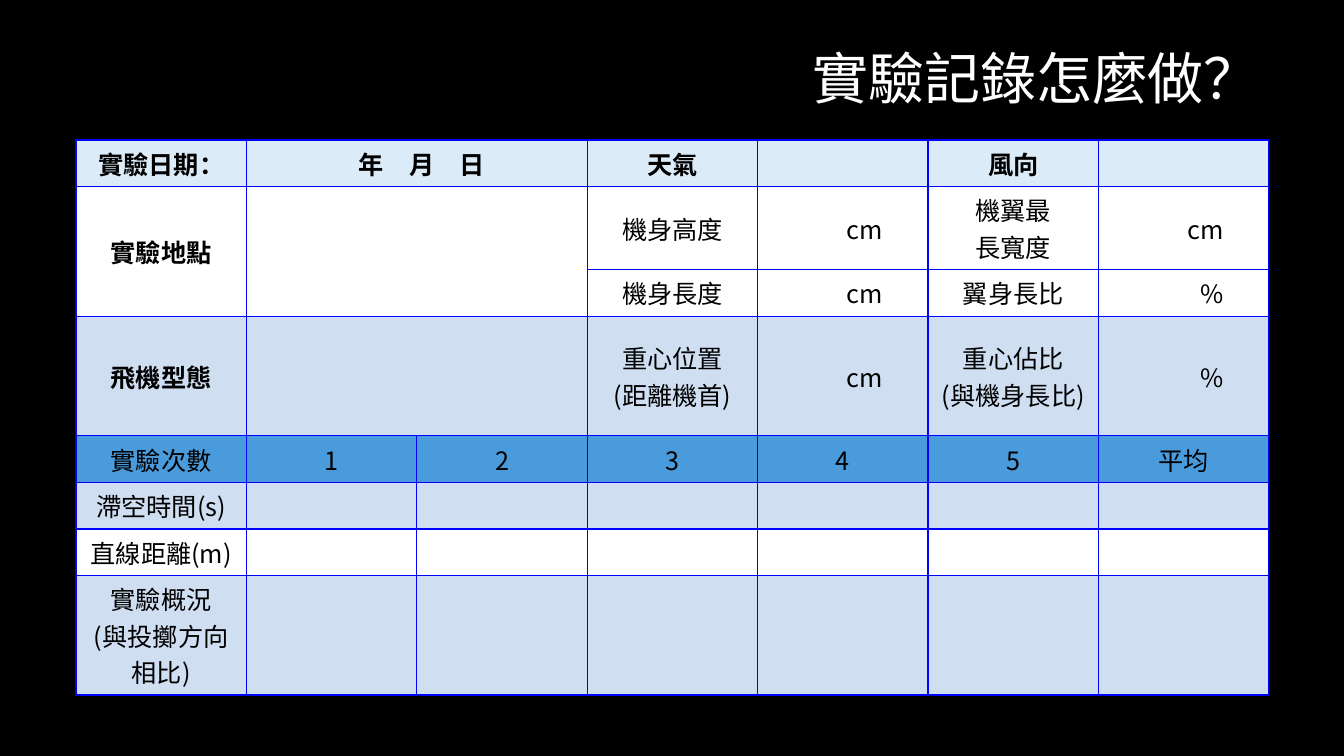
import pptx
import pptx.dml.color
import pptx.enum.text
import pptx.oxml.ns
import pptx.util
from dataclasses import dataclass
from lxml import etree

PX = 9525 / 1.05
ALIGN = pptx.enum.text.PP_ALIGN
MIDDLE = pptx.enum.text.MSO_ANCHOR.MIDDLE


@dataclass(frozen=True)
class Theme:
    font: str = "Noto Sans CJK JP"
    title_size: int = 40
    body_size: int = 18
    background: str = "000000"
    title: str = "FFFFFF"
    text: str = "000000"
    border: str = "0000FF"
    heading: str = "DBEBF8"
    plain: str = "FFFFFF"
    band: str = "D0DEF2"
    trials: str = "4A9BDC"


THEME = Theme()

RECORD_ROWS = [
    (46, THEME.heading, ["實驗日期：", "年　月　日", "", "天氣", "", "風向", ""]),
    (56, THEME.plain, ["實驗地點", "", "", "機身高度", "cm", "機翼最\v長寬度", "cm"]),
    (46, THEME.plain, ["", "", "", "機身長度", "cm", "翼身長比", "%"]),
    (94, THEME.band, ["飛機型態", "", "", "重心位置\v(距離機首)", "cm",
                      "重心佔比\v(與機身長比)", "%"]),
    (46, THEME.trials, ["實驗次數", "1", "2", "3", "4", "5", "平均"]),
    (46, THEME.band, ["滯空時間(s)"] + [""] * 6),
    (46, THEME.plain, ["直線距離(m)"] + [""] * 6),
    (115, THEME.band, ["實驗概況\v(與投擲方向相比)"] + [""] * 6),
]
MERGES = [((0, 1), (0, 2)), ((1, 0), (2, 0)), ((1, 1), (2, 2)), ((3, 1), (3, 2))]
BOLD_LABELS = {"實驗地點", "飛機型態"}
UNITS = {"cm", "%"}
UNIT_INSET = 45
DATE_INSET = 20


def px(length):
    return pptx.util.Emu(round(length * PX))


def rgb(color):
    return pptx.dml.color.RGBColor.from_string(color)


def apply(target, formats):
    for name, value in formats.items():
        setattr(target, name, value)


def format_text(paragraph, size, color, bold=False):
    for run in paragraph.runs:
        apply(run.font, {"name": THEME.font, "size": pptx.util.Pt(size), "bold": bold})
        run.font.color.rgb = rgb(color)
        east_asian = etree.SubElement(run.font._element, pptx.oxml.ns.qn("a:ea"))
        east_asian.set("typeface", THEME.font)


def add_borders(cell):
    properties = cell._tc.get_or_add_tcPr()
    for side in ("lnL", "lnR", "lnT", "lnB"):
        line = etree.SubElement(properties, pptx.oxml.ns.qn(f"a:{side}"), w="12700")
        fill = etree.SubElement(line, pptx.oxml.ns.qn("a:solidFill"))
        etree.SubElement(fill, pptx.oxml.ns.qn("a:srgbClr"), val=THEME.border)


def place_title(slide, left, top, width, height):
    title = slide.shapes.title
    apply(title, {"left": px(left), "top": px(top), "width": px(width), "height": px(height)})
    frame = title.text_frame
    apply(frame, {"text": "實驗記錄怎麼做？", "vertical_anchor": MIDDLE, "word_wrap": True})
    heading = frame.paragraphs[0]
    apply(heading, {"alignment": ALIGN.RIGHT, "line_spacing": 0.9})
    format_text(heading, THEME.title_size, THEME.title)


def fill_cell(cell, label, color, bold):
    add_borders(cell)
    cell.fill.solid()
    cell.fill.fore_color.rgb = rgb(color)
    cell.vertical_anchor = MIDDLE
    cell.text_frame.text = label
    paragraph = cell.text_frame.paragraphs[0]
    paragraph.alignment = ALIGN.RIGHT if label in UNITS else ALIGN.CENTER
    paragraph.font.size = pptx.util.Pt(THEME.body_size)
    format_text(paragraph, THEME.body_size, THEME.text, bold)
    if label in UNITS:
        cell.margin_right = px(UNIT_INSET)


def place_record(slide, left, top, width, height):
    columns = len(RECORD_ROWS[0][2])
    record = slide.shapes.add_table(
        len(RECORD_ROWS), columns, px(left), px(top), px(width), px(height)).table
    apply(record, {"first_row": False, "horz_banding": False})
    for column in record.columns:
        column.width = px(width / columns)
    for row, (row_height, color, labels) in enumerate(RECORD_ROWS):
        record.rows[row].height = px(row_height)
        for column, label in enumerate(labels):
            bold = row == 0 or label in BOLD_LABELS
            fill_cell(record.cell(row, column), label, color, bold)
    for first, last in MERGES:
        record.cell(*first).merge(record.cell(*last))
    record.cell(0, 1).margin_left = px(DATE_INSET)


def build_record_slide(deck):
    slide = deck.slides.add_slide(deck.slide_layouts[5])
    slide.background.fill.solid()
    slide.background.fill.fore_color.rgb = rgb(THEME.background)
    place_title(slide, 320, 10, 950, 142)
    place_record(slide, 76, 140, 1193, 495)


def main():
    deck = pptx.Presentation()
    apply(deck, {"slide_width": px(1344), "slide_height": px(756)})
    build_record_slide(deck)
    deck.save("out.pptx")


if __name__ == "__main__":
    main()
